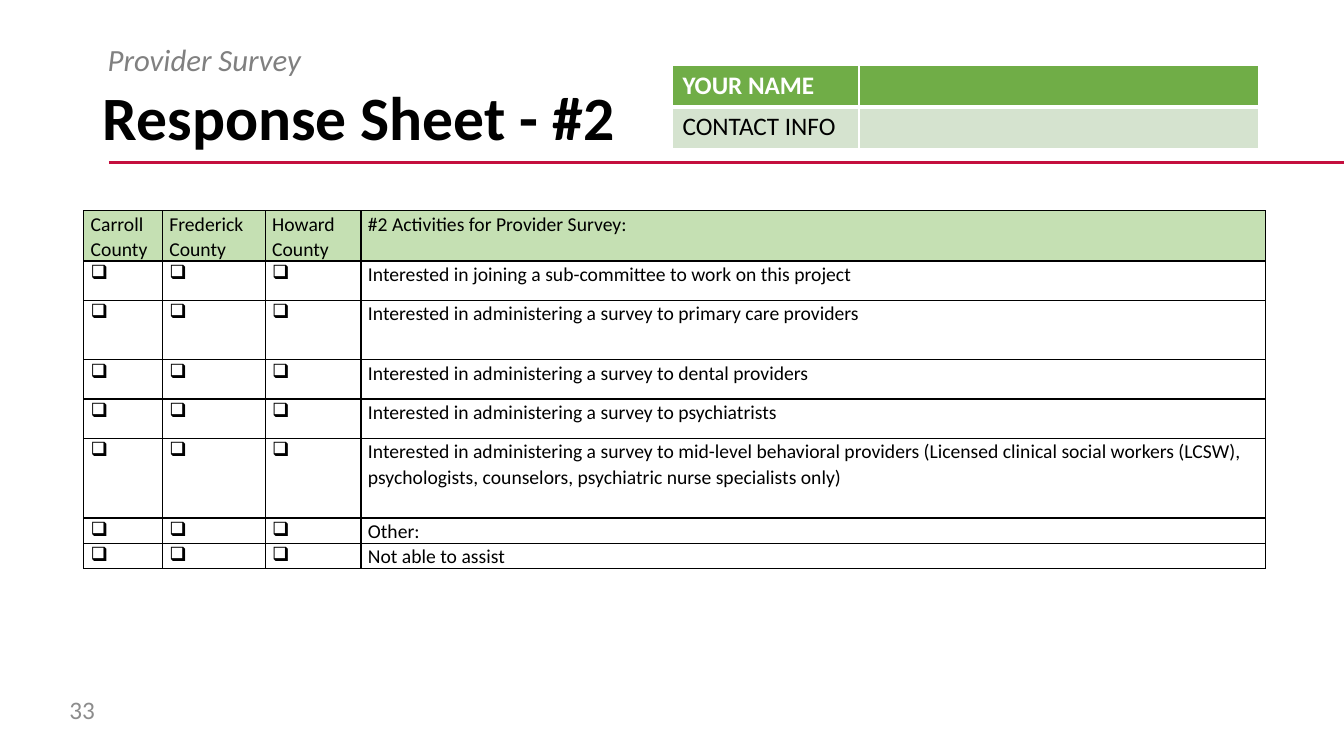
from lxml import etree
from pptx import Presentation
from pptx.dml.color import RGBColor
from pptx.enum.shapes import MSO_CONNECTOR
from pptx.enum.text import MSO_ANCHOR, PP_ALIGN
from pptx.oxml.ns import qn
from pptx.util import Inches, Pt

BLACK = RGBColor(0x00, 0x00, 0x00)
WHITE = RGBColor(0xFF, 0xFF, 0xFF)
CRIMSON = RGBColor(0xC4, 0x0E, 0x3E)
GRAY = RGBColor(0x80, 0x80, 0x80)
LIGHT_GRAY = RGBColor(0x8C, 0x8C, 0x8C)
GREEN = RGBColor(0x70, 0xAD, 0x47)
PALE_GREEN = RGBColor(0xD5, 0xE3, 0xCF)
HEADER_GREEN = RGBColor(0xC5, 0xE0, 0xB3)

COUNTIES = ["Carroll County", "Frederick County", "Howard County"]
ACTIVITIES = [
    "Interested in joining a sub-committee to work on this project",
    "Interested in administering a survey to primary care providers",
    "Interested in administering a survey to dental providers",
    "Interested in administering a survey to psychiatrists",
    "Interested in administering a survey to mid-level behavioral providers "
    "(Licensed clinical social workers (LCSW), psychologists, counselors, "
    "psychiatric nurse specialists only)",
    "Other:",
    "Not able to assist",
]


def write(frame, text, size, color, bold=False, italic=False, spacing=1.0):
    para = frame.paragraphs[0]
    para.alignment = PP_ALIGN.LEFT
    para.line_spacing = spacing
    para.font.size = Pt(size)
    if text:
        span = para.add_run()
        span.text = text
        font = span.font
        font.name = "Calibri"
        font.size = Pt(size)
        font.bold = bold
        font.italic = italic
        font.color.rgb = color


def add_label(page, place, text, size, color, anchor, **style):
    box = page.shapes.add_textbox(*map(Inches, place))
    frame = box.text_frame
    frame.word_wrap = True
    frame.vertical_anchor = anchor
    write(frame, text, size, color, **style)


def add_title(page, text):
    title = page.shapes.title
    title.left, title.top = Inches(0.92), Inches(0.65)
    title.width, title.height = Inches(11.5), Inches(1.09)
    title.text_frame.vertical_anchor = MSO_ANCHOR.MIDDLE
    write(title.text_frame, text, 44, BLACK, bold=True, spacing=0.9)


def add_rule(page):
    rule = page.shapes.add_connector(
        MSO_CONNECTOR.STRAIGHT, Inches(1.08), Inches(1.61), Inches(13.33), Inches(1.61))
    rule.line.color.rgb = CRIMSON
    rule.line.width = Pt(2.25)
    etree.SubElement(rule._element.spPr, qn("a:effectLst"))


def add_grid(page, left, top, widths, heights):
    table = page.shapes.add_table(
        len(heights), len(widths), Inches(left), Inches(top),
        Inches(sum(widths)), Inches(sum(heights))).table
    for column, width in zip(table.columns, widths):
        column.width = Inches(width)
    for row, height in zip(table.rows, heights):
        row.height = Inches(height)
    return table


def set_borders(cell, color, bottom=1):
    properties = cell._tc.get_or_add_tcPr()
    for index, (side, width) in enumerate(zip("LRTB", (1, 1, 1, bottom))):
        line = etree.Element(qn(f"a:ln{side}"), w=str(Pt(width)))
        fill = etree.SubElement(line, qn("a:solidFill"))
        etree.SubElement(fill, qn("a:srgbClr"), val=str(color))
        properties.insert(index, line)


def set_fill(cell, color):
    if color is None:
        cell.fill.background()
    else:
        cell.fill.solid()
        cell.fill.fore_color.rgb = color


def add_checkbox(cell):
    properties = cell.text_frame.paragraphs[0]._p.get_or_add_pPr()
    properties.set("marL", str(Inches(0.25)))
    properties.set("indent", str(Inches(-0.25)))
    etree.SubElement(properties, qn("a:buChar"), char="❑")


def add_contact_table(page):
    table = add_grid(page, 6.67, 0.65, [1.85, 3.96], [0.41, 0.41])
    rows = [("YOUR NAME", GREEN, WHITE, True), ("CONTACT INFO", PALE_GREEN, BLACK, False)]
    for row, (label, fill, color, bold) in enumerate(rows):
        for column, text in enumerate((label, "")):
            cell = table.cell(row, column)
            write(cell.text_frame, text, 18, color, bold=bold)
            set_fill(cell, fill)
            set_borders(cell, WHITE, bottom=3 if row == 0 else 1)


def add_activity_table(page):
    table = add_grid(page, 0.83, 2.09, [0.78, 1.02, 0.95, 8.97],
                     [0.39, 0.39, 0.59, 0.39, 0.39, 0.79, 0.19, 0.19])
    rows = [COUNTIES + ["#2 Activities for Provider Survey:"]]
    rows += [[" "] * len(COUNTIES) + [activity] for activity in ACTIVITIES]
    for row, texts in enumerate(rows):
        for column, text in enumerate(texts):
            cell = table.cell(row, column)
            cell.margin_left = cell.margin_right = Inches(0.07)
            cell.margin_top = cell.margin_bottom = 0
            if row > 0 and column < len(COUNTIES):
                add_checkbox(cell)
            write(cell.text_frame, text, 14, BLACK, spacing=1.07)
            set_fill(cell, HEADER_GREEN if row == 0 else None)
            set_borders(cell, BLACK)


def main():
    deck = Presentation()
    deck.slide_width, deck.slide_height = Inches(13.33), Inches(7.5)
    page = deck.slides.add_slide(deck.slide_layouts[5])
    add_rule(page)
    add_title(page, "Response Sheet - #2")
    add_label(page, (0.59, 6.84, 0.59, 0.4), "33", 18, LIGHT_GRAY, MSO_ANCHOR.MIDDLE)
    add_label(page, (0.97, 0.4, 11.45, 0.38), "Provider Survey", 22, GRAY,
              MSO_ANCHOR.TOP, italic=True, spacing=0.9)
    add_contact_table(page)
    add_activity_table(page)
    deck.save("out.pptx")


if __name__ == "__main__":
    main()
